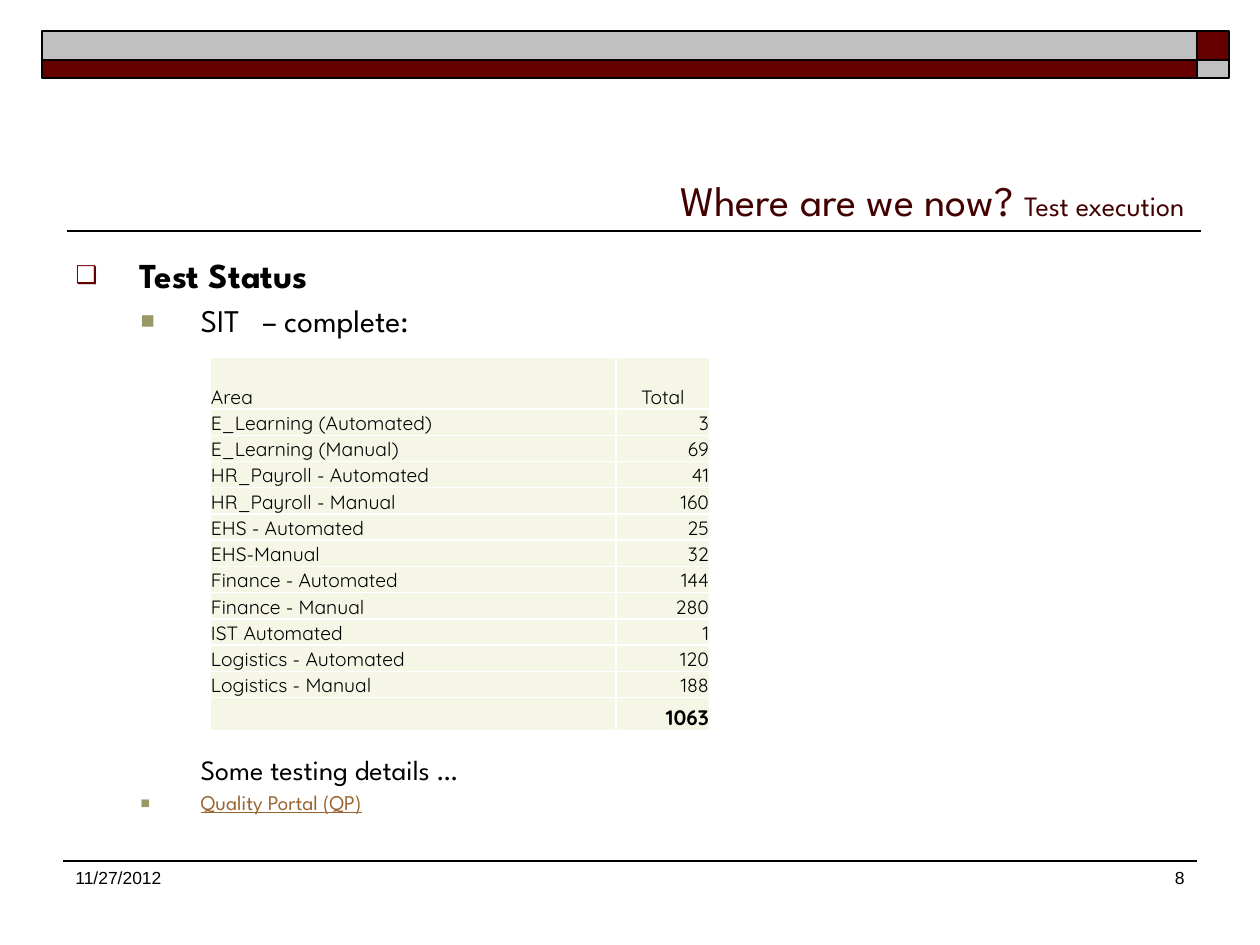
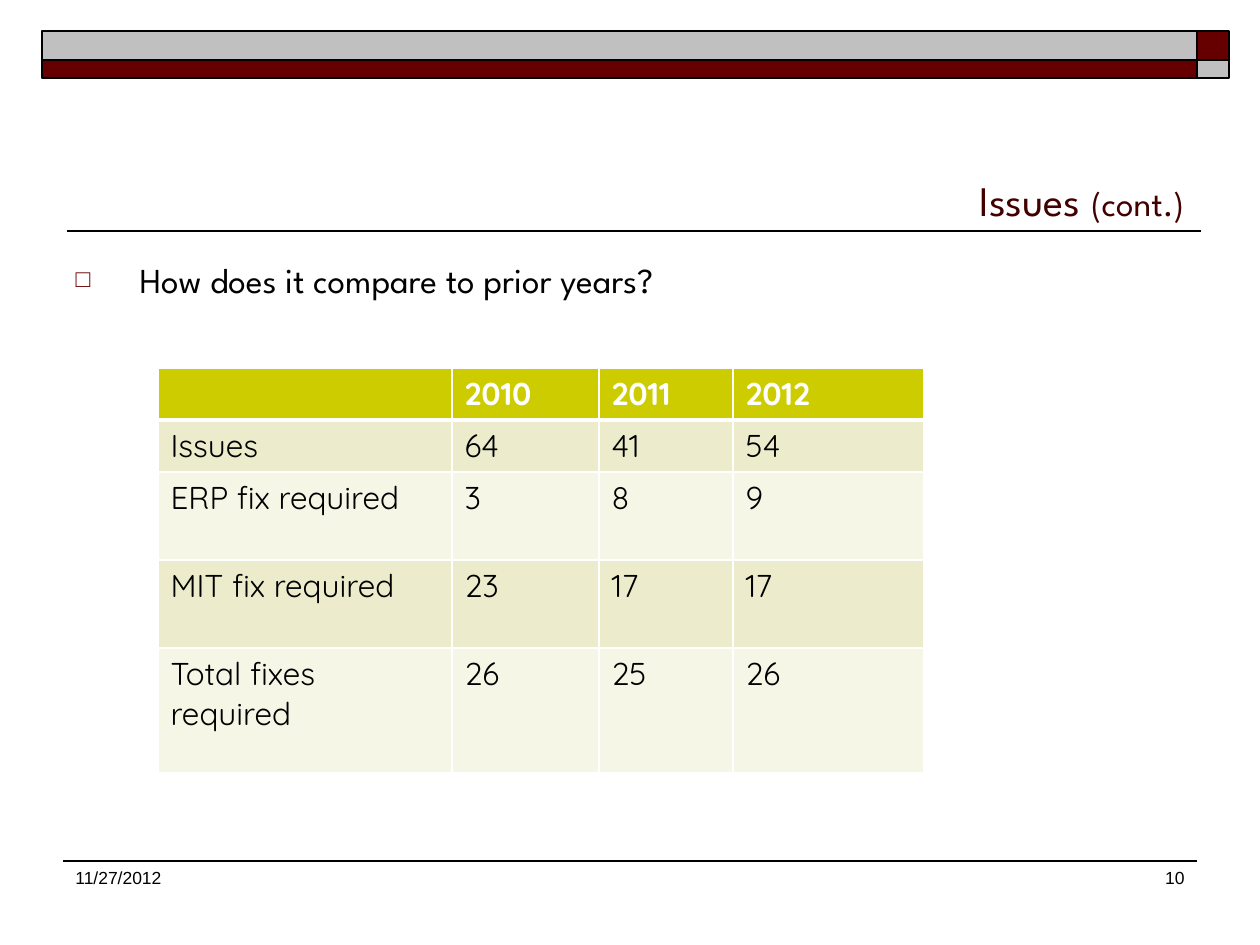
import pptx
import pptx.util
import pptx.dml.color
import pptx.enum.shapes
import pptx.enum.text
import pptx.oxml.ns
import lxml.etree

PX = 914400 / 126
WINE, SILVER, BLACK, WHITE = "660000", "C0C0C0", "000000", "FFFFFF"
PALE, CREAM, LIME = "F6F6E7", "ECECCC", "CCCC00"
HEAD, BODY, FOOT = "League Spartan", "Quicksand", "Arial"
ALIGN = pptx.enum.text.PP_ALIGN
ANCHOR = pptx.enum.text.MSO_ANCHOR
DATE = "11/27/2012"


def emu(px):
    return pptx.util.Emu(round(px * PX))


def rgb(code):
    return pptx.dml.color.RGBColor.from_string(code)


def tag(parent, name, **attrs):
    return lxml.etree.SubElement(parent, pptx.oxml.ns.qn("a:" + name), attrs)


def style(item, values):
    for key, value in values.items():
        setattr(item, key, value)


def write(para, text, size, face, color=BLACK, **more):
    run = para.add_run()
    run.text = text
    style(run.font, {"size": pptx.util.Pt(size), "name": face, **more})
    run.font.color.rgb = rgb(color)
    return run


def move(shape, box):
    style(shape, dict(zip(("left", "top", "width", "height"), map(emu, box))))


def rule(slide, left, top, width, weight):
    kind = pptx.enum.shapes.MSO_CONNECTOR.STRAIGHT
    line = slide.shapes.add_connector(
        kind, emu(left), emu(top), emu(left + width), emu(top))
    line.line.color.rgb = rgb(BLACK)
    line.line.width = pptx.util.Pt(weight)
    tag(line._element.spPr, "effectLst")


def band(slide, box):
    """Two rows of bars with the colours swapped at the right end."""
    left, top, width, height = box
    end, high = 32, 29
    rows = ((top, high, SILVER, WINE), (top + high, height - high, WINE, SILVER))
    for y, tall, long, short in rows:
        for x, wide, color in ((left, width - end, long),
                               (left + width - end, end, short)):
            bar = slide.shapes.add_shape(
                pptx.enum.shapes.MSO_SHAPE.RECTANGLE,
                *map(emu, (x, y, wide, tall)))
            bar.shadow.inherit = False
            bar.fill.solid()
            bar.fill.fore_color.rgb = rgb(color)
            bar.line.color.rgb = rgb(BLACK)
            bar.line.width = pptx.util.Pt(1)


def footer(slide, box, number):
    left, top, width, height = box
    rule(slide, left, top, width, 0.75)
    notes = ((left, 231, DATE, ALIGN.LEFT),
             (left + width - 262, 262, number, ALIGN.RIGHT))
    for x, wide, text, align in notes:
        frame = slide.shapes.add_textbox(
            *map(emu, (x, top, wide, height))).text_frame
        frame.word_wrap = True
        para = frame.paragraphs[0]
        para.alignment = align
        write(para, text, 10, FOOT)


def title(slide, box, main, side, size):
    shape = slide.shapes.title
    move(shape, box)
    frame = shape.text_frame
    style(frame, {"word_wrap": True, "vertical_anchor": ANCHOR.BOTTOM,
                  "auto_size": pptx.enum.text.MSO_AUTO_SIZE.NONE})
    para = frame.paragraphs[0]
    para.alignment = ALIGN.RIGHT
    write(para, main + " ", 24, HEAD, "420000")
    write(para, side, size, HEAD, "420000")
    rule(slide, box[0] + 4, box[1] + box[3], box[2], 1)


def body(slide, box):
    shape = slide.placeholders[1]
    move(shape, box)
    frame = shape.text_frame
    style(frame, {"word_wrap": True, "vertical_anchor": ANCHOR.TOP,
                  "auto_size": pptx.enum.text.MSO_AUTO_SIZE.NONE})
    return frame


def item(frame, level, mark, gap, lines):
    """Start a list entry; mark is (character, colour, percent) or None."""
    first = frame.paragraphs[0]
    para = frame.add_paragraph() if first.runs else first
    props = para._p.get_or_add_pPr()
    indent, hang = ((64, 64), (125, 60))[level]
    props.set("marL", str(emu(indent)))
    props.set("indent", str(emu(-hang if mark else 0)))
    if mark:
        char, color, percent = mark
        tag(tag(props, "buClr"), "srgbClr", val=color)
        tag(props, "buSzPct", val=str(percent * 1000))
        tag(props, "buFont", typeface=FOOT)
        tag(props, "buChar", char=char)
    else:
        tag(props, "buNone")
    style(para, {"level": level, "line_spacing": lines,
                 "space_before": pptx.util.Pt(gap)})
    return para


def border(cell, base):
    props = cell._tc.get_or_add_tcPr()
    for spot, side in enumerate(("lnL", "lnR", "lnT", "lnB")):
        points = base if side == "lnB" else 1
        line = tag(props, side, w=str(points * 12700))
        tag(tag(line, "solidFill"), "srgbClr", val=WHITE)
        props.insert(spot, line)


def grid(slide, spot, cols, rows, data, look):
    """Fill a table; look(row, col) gives the format of a cell."""
    table = slide.shapes.add_table(
        len(rows), len(cols),
        *map(emu, (*spot, sum(cols), sum(rows)))).table
    style(table, {"first_row": False, "horz_banding": False})
    for col, wide in zip(table.columns, cols):
        col.width = emu(wide)
    for row, tall in zip(table.rows, rows):
        row.height = emu(tall)
    for r, line in enumerate(data):
        for c, text in enumerate(line):
            form, cell = look(r, c), table.cell(r, c)
            cell.fill.solid()
            cell.fill.fore_color.rgb = rgb(form["fill"])
            border(cell, form.get("base", 1))
            style(cell, form["cell"])
            para = cell.text_frame.paragraphs[0]
            para.alignment = form.get("align", ALIGN.LEFT)
            if text:
                write(para, text, form["size"], BODY,
                      form.get("color", BLACK), bold=form["bold"])
            else:
                tag(para._p, "endParaRPr", sz=str(form["size"] * 100))


def begin(deck, number, main, side, size):
    slide = deck.slides.add_slide(deck.slide_layouts[1])
    band(slide, (42, 31, 1187, 47))
    title(slide, (63, 73, 1134, 158), main, side, size)
    footer(slide, (63, 861, 1134, 63), number)
    return slide, body(slide, (63, 252, 1134, 592))


def status(deck):
    slide, frame = begin(deck, "8", "Where are we now?", "Test execution", 16)
    square = ("■", "999966", 75)

    # List around the table
    para = item(frame, 0, ("❑", WINE, 70), 0, 0.9)
    write(para, "Test Status", 20, HEAD, bold=True)
    para = item(frame, 1, square, 5.4, 0.9)
    write(para, "SIT", 18, HEAD)
    space = write(para, " ", 18, HEAD)
    space.font._element.set("spc", "880")
    write(para, "– complete:", 18, HEAD)
    para = item(frame, 1, None, 238, 0.9)
    write(para, "Some testing details …", 16, HEAD)
    para = item(frame, 1, square, 3.6, 0.9)
    write(para, "Quality Portal (QP)", 12, HEAD, "996633", underline=True)

    # Test counts by area
    areas = [("E_Learning (Automated)", 3), ("E_Learning (Manual)", 69),
             ("HR_Payroll - Automated", 41), ("HR_Payroll - Manual", 160),
             ("EHS - Automated", 25), ("EHS-Manual", 32),
             ("Finance - Automated", 144), ("Finance - Manual", 280),
             ("IST Automated", 1), ("Logistics - Automated", 120),
             ("Logistics - Manual", 188)]
    total = sum(count for _, count in areas)
    data = [("Area", "Total"), *((n, str(v)) for n, v in areas),
            ("", str(total))]
    last = len(data) - 1
    cell = {"vertical_anchor": ANCHOR.BOTTOM, "margin_left": emu(1),
            "margin_right": emu(1), "margin_top": emu(1), "margin_bottom": 0}

    def look(r, c):
        align = ALIGN.LEFT if c == 0 else ALIGN.RIGHT if r else ALIGN.CENTER
        return {"fill": PALE, "cell": cell, "align": align,
                "size": 12 if r == last else 11, "bold": r == last}

    rows = [52] + [289 / len(areas)] * len(areas) + [33]
    grid(slide, (210, 357), (406, 94), rows, data, look)


def issues(deck):
    slide, frame = begin(deck, "10", "Issues", "(cont.)", 20)
    para = item(frame, 0, ("□", WINE, 70), 0, 1.0)
    write(para, "How does it compare to prior years?", 20, HEAD)

    # Yearly comparison
    data = [("", "2010", "2011", "2012"),
            ("Issues", "64", "41", "54"),
            ("ERP fix required", "3", "8", "9"),
            ("MIT fix required", "23", "17", "17"),
            ("Total fixes required", "26", "25", "26")]

    def look(r, c):
        form = {"fill": CREAM if r % 2 else PALE, "cell": {},
                "size": 18, "bold": r == 0}
        if r == 0:
            form.update(fill=LIME, color=WHITE, base=3)
        return form

    grid(slide, (158, 368), (294, 147, 134, 191),
         (52, 52, 88, 88, 125), data, look)


def main():
    deck = pptx.Presentation()
    style(deck, {"slide_width": emu(1260), "slide_height": emu(945)})
    status(deck)
    issues(deck)
    deck.save("out.pptx")


if __name__ == "__main__":
    main()
